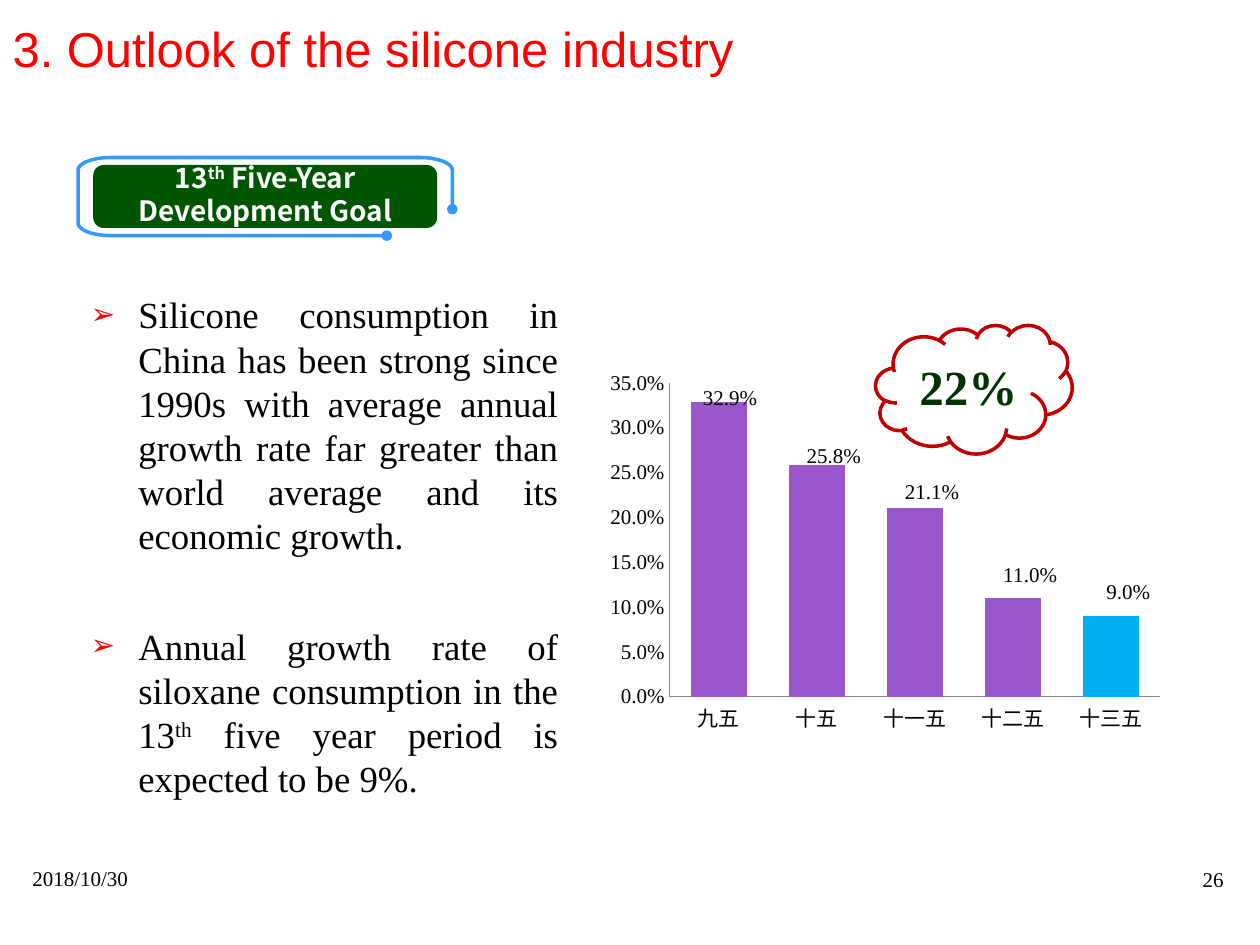
from math import cos, pi, sin

from lxml import etree
from pptx import Presentation
from pptx.chart.data import CategoryChartData
from pptx.dml.color import RGBColor
from pptx.enum.chart import XL_CHART_TYPE as CT, XL_TICK_MARK as TM
from pptx.enum.shapes import MSO_SHAPE as SHAPE
from pptx.enum.text import MSO_ANCHOR as ANCHOR, MSO_AUTO_SIZE as AUTO, PP_ALIGN as ALIGN
from pptx.oxml import parse_xml
from pptx.oxml.ns import nsdecls, qn
from pptx.util import Inches, Pt

BLACK = RGBColor(0, 0, 0)
WHITE = RGBColor(255, 255, 255)
RED = RGBColor(255, 0, 0)
DARK_RED = RGBColor(0xC0, 0, 0)
GREEN = RGBColor(0, 0x55, 0)
DARK_GREEN = RGBColor(0, 0x33, 0)
BLUE = RGBColor(0x33, 0x99, 0xFF)
PURPLE = RGBColor(0x9A, 0x57, 0xCD)
CYAN = RGBColor(0, 0xB0, 0xF0)
GREY = RGBColor(0x86, 0x86, 0x86)
SERIF = "Times New Roman"
SANS = "Arial"
BADGE_FONT = "Noto Sans CJK JP"
CHART_FONT = "Calibri"
NO_LEADERS = (
    f'<c:extLst {nsdecls("c")}><c:ext uri="{{CE6537A1-D6FC-4f65-9D91-7224C49458BB}}" '
    'xmlns:c15="http://schemas.microsoft.com/office/drawing/2012/chart">'
    '<c15:showLeaderLines val="0"/></c:ext></c:extLst>'
)


def style(font, size, color, name, bold=False):
    """Set size, colour, face and weight of a font."""
    font.size, font.name, font.bold = Pt(size), name, bold
    font.color.rgb = color


def add_runs(p, runs, *look):
    """Add runs to a paragraph, raising those that read 'th'."""
    for text in runs:
        r = p.add_run()
        r.text = text
        style(r.font, *look)
        if text == "th":
            r.font._element.set("baseline", "30000")


def set_frame(tf, anchor, margins=(0.1, 0.05, 0.1, 0.05)):
    """Set wrapping, anchor and margins of a text frame."""
    tf.word_wrap, tf.vertical_anchor = True, anchor
    tf.margin_left, tf.margin_top, tf.margin_right, tf.margin_bottom = map(Inches, margins)


def add_title(slide, box, text):
    """Place and format the title placeholder."""
    sp = slide.shapes.title
    sp.left, sp.top, sp.width, sp.height = map(Inches, box)
    tf = sp.text_frame
    set_frame(tf, ANCHOR.TOP, (0.1, 0.08, 0.1, 0.04))
    tf.auto_size = AUTO.SHAPE_TO_FIT_TEXT
    p = tf.paragraphs[0]
    p.alignment = ALIGN.LEFT
    add_runs(p, [text], 28, RED, SANS)


def add_footer(slide, box, text, align, anchor):
    """Add one small footer text."""
    tf = slide.shapes.add_textbox(*map(Inches, box)).text_frame
    set_frame(tf, anchor)
    p = tf.paragraphs[0]
    p.alignment = align
    add_runs(p, [text], 12, BLACK, SERIF)


def add_badge(slide, box, runs):
    """Add the green badge inside its open rounded frame."""
    x, y, w, h = box
    rx, ry = 0.26, 0.1
    group = slide.shapes.add_group_shape()

    def corner(cx, cy, start):
        """Return points of a quarter ellipse, turning from the start angle."""
        angles = [start + pi / 2 * i / 12 for i in range(13)]
        return [(cx + rx * cos(a), cy - ry * sin(a)) for a in angles]

    points = corner(x + w - rx, y + ry, 0)
    points += corner(x + rx, y + ry, pi / 2)
    points += corner(x + rx, y + h - ry, pi)
    points.append((x + w - 0.52, y + h))
    builder = group.shapes.build_freeform(Inches(x + w), Inches(y + 0.41))
    builder.add_line_segments([(Inches(px), Inches(py)) for px, py in points], close=False)
    frame = builder.convert_to_shape()
    frame.shadow.inherit = False
    frame.fill.background()
    frame.line.color.rgb, frame.line.width = BLUE, Pt(2)
    ln = frame.line._get_or_add_ln()
    for end in ("a:headEnd", "a:tailEnd"):
        etree.SubElement(ln, qn(end), type="oval")

    inner = (x + 0.12, y + 0.06, w - 0.24, 0.5)
    sp = group.shapes.add_shape(SHAPE.ROUNDED_RECTANGLE, *map(Inches, inner))
    sp.shadow.inherit = False
    sp.fill.solid()
    sp.fill.fore_color.rgb = GREEN
    sp.line.fill.background()
    set_frame(sp.text_frame, ANCHOR.MIDDLE, (0.1, 0.04, 0.1, 0.08))
    p = sp.text_frame.paragraphs[0]
    p.alignment = ALIGN.CENTER
    add_runs(p, runs, 16, WHITE, BADGE_FONT, True)


def add_bullets(slide, box, items):
    """Add the justified arrow-bullet list."""
    tf = slide.shapes.add_textbox(*map(Inches, box)).text_frame
    set_frame(tf, ANCHOR.TOP)
    for i, runs in enumerate(items):
        p = tf.add_paragraph() if i else tf.paragraphs[0]
        p.alignment = ALIGN.JUSTIFY
        if i:
            p.space_before = Pt(38)
        pPr = p._p.get_or_add_pPr()
        pPr.set("marL", str(Inches(0.38)))
        pPr.set("indent", str(-Inches(0.38)))
        color = etree.SubElement(pPr, qn("a:buClr"))
        etree.SubElement(color, qn("a:srgbClr"), val=str(RED))
        etree.SubElement(pPr, qn("a:buSzPct"), val="80000")
        etree.SubElement(pPr, qn("a:buFont"), typeface=SANS)
        etree.SubElement(pPr, qn("a:buChar"), char="➢")
        add_runs(p, runs, 21, BLACK, SERIF)


def manual_layout(**parts):
    """Return a chart layout element with the given parts."""
    inner = "".join(f'<c:{k} val="{v}"/>' for k, v in parts.items())
    return parse_xml(f'<c:layout {nsdecls("c")}><c:manualLayout>{inner}</c:manualLayout></c:layout>')


def add_growth_chart(slide, box, rows):
    """Add the growth-rate columns; each row is category, value, label offset."""
    data = CategoryChartData(number_format="0.0%")
    data.categories = [row[0] for row in rows]
    data.add_series("Series 1", [row[1] for row in rows])
    chart = slide.shapes.add_chart(CT.COLUMN_STACKED, *map(Inches, box), data).chart
    chart.has_legend = chart.has_title = False
    style(chart.font, 10, BLACK, CHART_FONT)
    for axis, face in ((chart.category_axis, CHART_FONT), (chart.value_axis, SERIF)):
        axis.major_tick_mark = axis.minor_tick_mark = TM.NONE
        axis.has_major_gridlines = False
        axis.format.line.color.rgb = GREY
        style(axis.tick_labels.font, 12, BLACK, face)
    axis = chart.value_axis
    axis.minimum_scale, axis.maximum_scale, axis.major_unit = 0, 0.35, 0.05
    axis.tick_labels.number_format = "0.0%"
    axis.tick_labels.number_format_is_linked = False

    plot = chart.plots[0]
    plot.gap_width, plot.overlap, plot.vary_by_categories = 75, 100, False
    area = chart._chartSpace.find(".//" + qn("c:plotArea"))
    for old in area.findall(qn("c:layout")):
        area.remove(old)
    area.insert(0, manual_layout(layoutTarget="inner", xMode="edge", yMode="edge",
                                 x=0.12, y=0.05, w=0.86, h=0.83))

    series = plot.series[0]
    series.format.fill.solid()
    series.format.fill.fore_color.rgb = PURPLE
    last = series.points[len(rows) - 1].format.fill
    last.solid()
    last.fore_color.rgb = CYAN
    labels = series.data_labels
    labels.show_value = True
    labels.number_format, labels.number_format_is_linked = "0.0%", False
    style(labels.font, 12, BLACK, SERIF)
    for i in range(len(rows)):
        style(series.points[i].data_label.font, 12, BLACK, SERIF)
    for label, (_, _, dx, dy) in zip(series._element.iter(qn("c:dLbl")), rows):
        label.insert(1, manual_layout(x=dx, y=dy))
        label.insert(2, parse_xml(f'<c:numFmt {nsdecls("c")} formatCode="0.0%" sourceLinked="0"/>'))
    dLbls = series._element.find(qn("c:dLbls"))
    for leaders in dLbls.findall(qn("c:showLeaderLines")):
        dLbls.remove(leaders)
    etree.SubElement(dLbls, qn("c:showLeaderLines"), val="0")
    dLbls.append(parse_xml(NO_LEADERS))


def add_cloud(slide, box, text):
    """Add the cloud with the average rate."""
    sp = slide.shapes.add_shape(SHAPE.CLOUD, *map(Inches, box))
    sp.shadow.inherit = False
    sp.fill.background()
    sp.line.color.rgb, sp.line.width = DARK_RED, Pt(2)
    set_frame(sp.text_frame, ANCHOR.MIDDLE, (0.12, 0.04, 0.1, 0.05))
    p = sp.text_frame.paragraphs[0]
    p.alignment = ALIGN.CENTER
    add_runs(p, [text], 28, DARK_GREEN, SERIF, True)


def main():
    """Build and save the slide."""
    prs = Presentation()
    prs.slide_width, prs.slide_height = Inches(10), Inches(7.5)
    slide = prs.slides.add_slide(prs.slide_layouts[5])
    add_title(slide, (0, 0.07, 6.02, 0.59), "3. Outlook of the silicone industry")
    add_footer(slide, (9.25, 6.82, 0.56, 0.31), "26", ALIGN.RIGHT, ANCHOR.MIDDLE)
    add_footer(slide, (0.16, 6.82, 2.33, 0.52), "2018/10/30", ALIGN.LEFT, ANCHOR.TOP)
    add_bullets(slide, (0.62, 2.27, 3.91, 3.91), [
        ["Silicone consumption in China has been strong since 1990s with average annual "
         "growth rate far greater than world average and its economic growth."],
        ["Annual growth rate of siloxane consumption in the 13", "th",
         " five year period is expected to be 9%."]])
    add_growth_chart(slide, (4.77, 2.89, 4.53, 3), [
        ("九五", 0.329, 0.02, -0.4), ("十五", 0.258, 0.03, -0.33), ("十一五", 0.211, 0.03, -0.29),
        ("十二五", 0.11, 0.03, -0.19), ("十三五", 0.09, 0.03, -0.17)])
    add_cloud(slide, (6.95, 2.58, 1.56, 1.02), "22%")
    add_badge(slide, (0.62, 1.25, 2.97, 0.62), ["13", "th", " Five-Year Development Goal"])
    prs.save("out.pptx")


if __name__ == "__main__":
    main()
